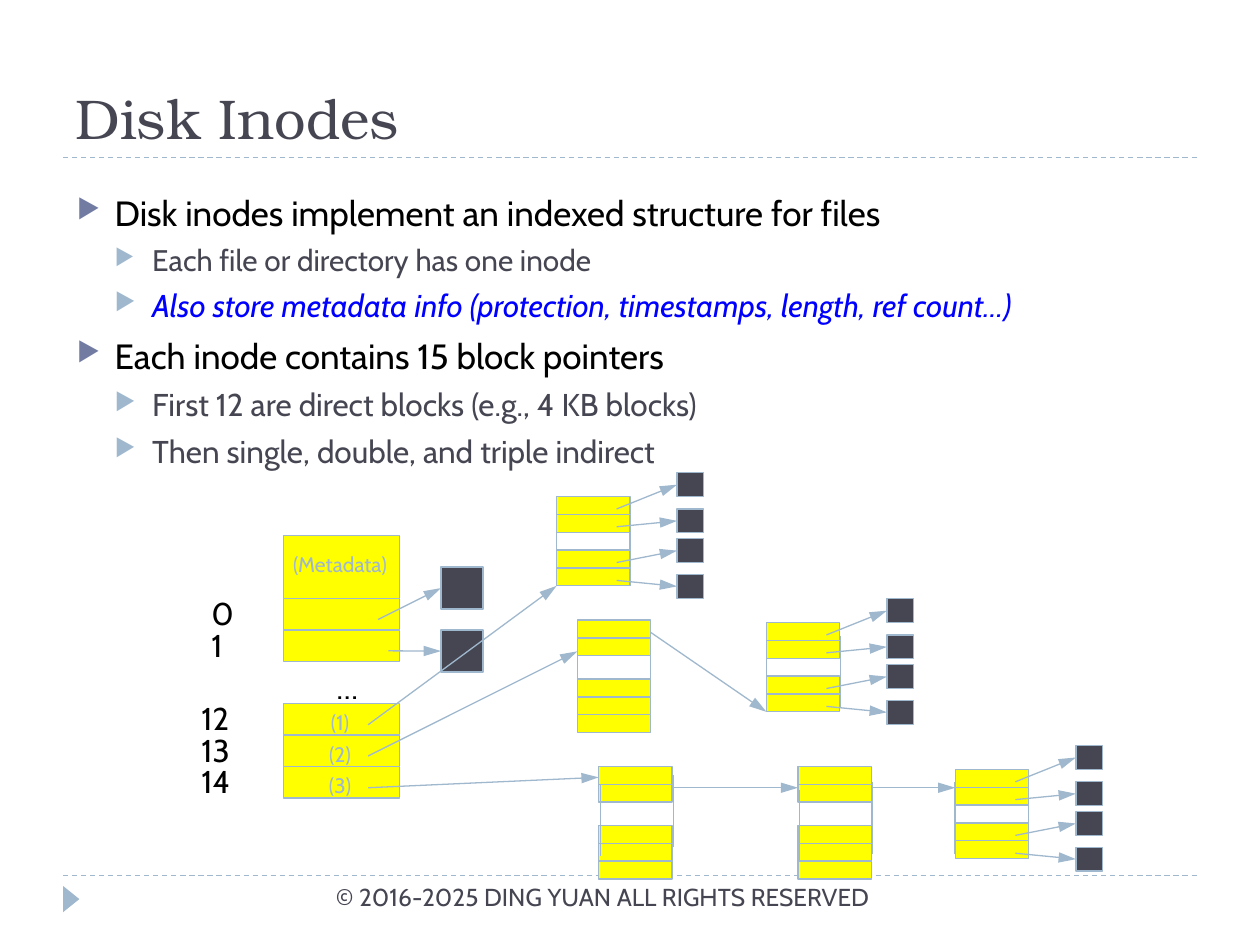
import dataclasses

import lxml.etree
import pptx
import pptx.dml.color
import pptx.enum.dml
import pptx.enum.shapes
import pptx.enum.text
import pptx.oxml.ns
import pptx.util

Cm = pptx.util.Cm
Pt = pptx.util.Pt
SHAPE = pptx.enum.shapes.MSO_SHAPE
ALIGN = pptx.enum.text.PP_ALIGN
ANCHOR = pptx.enum.text.MSO_ANCHOR


def color(code):
    return pptx.dml.color.RGBColor.from_string(code)


@dataclasses.dataclass(frozen=True)
class Theme:
    body_font: str = "Cabin"
    title_font: str = "TeX Gyre Bonum"
    ink: str = "464653"
    black: str = "000000"
    accent: str = "9FB8CD"
    bullet: str = "727CA3"
    highlight: str = "0000FF"
    cell: str = "FFFF00"
    title: int = 32
    lead: int = 20
    point: int = 18
    small_point: int = 17
    footer: int = 14
    caption: int = 12


THEME = Theme()

POINTS = [
    (0, "Disk inodes implement an indexed structure for files", THEME.lead, THEME.black),
    (1, "Each file or directory has one inode", THEME.small_point, THEME.ink),
    (1, "Also store metadata info (protection, timestamps, length, ref count…)",
     THEME.point, THEME.highlight),
    (0, "Each inode contains 15 block pointers", THEME.lead, THEME.black),
    (1, "First 12 are direct blocks (e.g., 4 KB blocks)", THEME.point, THEME.ink),
    (1, "Then single, double, and triple indirect", THEME.point, THEME.ink),
]

INODE_LEFT, INODE_WIDTH, INODE_ROW = 5.72, 2.33, 0.64
DIRECT_ROWS = {"0": 12.07, "1": 12.7}
INDIRECT_ROWS = {"12": 14.18, "13": 14.82, "14": 15.45}

ROW, TABLE_WIDTH = 0.36, 1.48
LEAF_ROWS = [0, ROW, 3 * ROW, 4 * ROW]
INDEX_ROWS = [0, ROW, 1.19, 1.19 + ROW, 1.19 + 2 * ROW]
LEAF_BLOCKS = [-0.48, 0.25, 0.85, 1.57]
SINGLE_LEAF, DOUBLE_LEAF, TRIPLE_LEAF = (11.22, 10.01), (15.45, 12.55), (19.26, 15.51)
DOUBLE_INDEX, TRIPLE_INDEX, TRIPLE_MIDDLE = (11.64, 12.5), (12.07, 15.45), (16.09, 15.45)

SIDE_HEIGHT = 1.45
SIDES = [
    (11.22, 10.36), (12.7, 10.36), (13.12, 12.91), (11.64, 13.02),
    (15.45, 12.88), (16.94, 12.83), (13.58, 15.62), (12.1, 15.81),
    (16.11, 15.92), (17.58, 15.77), (19.25, 15.76), (20.73, 15.76),
]


def assign(target, values):
    for name, value in values.items():
        setattr(target, name, value)


def add_text(page, place, text, size, align=ALIGN.LEFT, shade=THEME.black,
             font=THEME.body_font, anchor=ANCHOR.TOP):
    box = page.shapes.add_textbox(*map(Cm, place))
    assign(box.text_frame, {"word_wrap": True, "vertical_anchor": anchor})
    para = box.text_frame.paragraphs[0]
    para.alignment = align
    add_span(para, text, size, shade, font)


def add_span(para, text, size, shade, font=THEME.body_font, italic=False):
    span = para.add_run()
    span.text = text
    assign(span.font, {"name": font, "size": Pt(size), "italic": italic})
    span.font.color.rgb = color(shade)


def add_bullet(para, level):
    properties = para._p.get_or_add_pPr()
    properties.set("marL", str(Cm(0.76 * (level + 1))))
    properties.set("indent", str(-Cm(0.76)))
    qualify = pptx.oxml.ns.qn
    tint = lxml.etree.SubElement(properties, qualify("a:buClr"))
    shade = THEME.accent if level else THEME.bullet
    lxml.etree.SubElement(tint, qualify("a:srgbClr"), val=shade)
    lxml.etree.SubElement(properties, qualify("a:buSzPct"), val="76000")
    lxml.etree.SubElement(properties, qualify("a:buChar"), char="▶")


def add_points(page):
    box = page.shapes.add_textbox(Cm(1.3), Cm(3.73), Cm(22.63), Cm(5.92))
    frame = box.text_frame
    frame.word_wrap = True
    for number, (level, text, size, shade) in enumerate(POINTS):
        para = frame.add_paragraph() if number else frame.paragraphs[0]
        assign(para, {"level": level, "space_before": Pt(5 if level else 6)})
        add_bullet(para, level)
        add_span(para, text, size, shade, italic=shade == THEME.highlight)


def add_box(holder, left, top, width, height, shade):
    box = holder.shapes.add_shape(SHAPE.RECTANGLE, *map(Cm, (left, top, width, height)))
    box.shadow.inherit = False
    box.fill.solid()
    box.fill.fore_color.rgb = color(shade)
    box.line.color.rgb = color(THEME.accent)
    box.line.width = Pt(0.75)
    return box


def add_line(holder, start, end, arrow=False, dash=None, target=None):
    line = holder.shapes.add_connector(
        pptx.enum.shapes.MSO_CONNECTOR.STRAIGHT, *map(Cm, (*start, *end)))
    line.line.color.rgb = color(THEME.accent)
    assign(line.line, {"width": Pt(0.75), "dash_style": dash})
    if arrow:
        lxml.etree.SubElement(line.line._get_or_add_ln(), pptx.oxml.ns.qn("a:tailEnd"),
                              type="triangle", w="med", len="lg")
    lxml.etree.SubElement(line._element.spPr, pptx.oxml.ns.qn("a:effectLst"))
    if target is not None:
        line.end_connect(target, 1)


def add_block_arrow(holder, start, left, top, width, height):
    block = add_box(holder, left, top, width, height, THEME.ink)
    add_line(holder, start, (left, top + height / 2), arrow=True, target=block)


def add_table_rows(page, origin, rows):
    group = page.shapes.add_group_shape()
    left, top = origin
    for row in rows:
        add_box(group, left, top + row, TABLE_WIDTH, ROW, THEME.cell)
    return group


def add_leaf(page, origin):
    group = add_table_rows(page, origin, LEAF_ROWS)
    left, top = origin
    for row, block in zip(LEAF_ROWS, LEAF_BLOCKS):
        add_block_arrow(group, (left + 1.21, top + row + 0.25),
                        left + 2.43, top + block, 0.53, 0.48)


def add_frame(page):
    for height in (17.65, 3.18):
        add_line(page, (1.27, height), (24.13, height),
                 dash=pptx.enum.dml.MSO_LINE.DASH)
    marker = page.shapes.add_shape(SHAPE.ISOSCELES_TRIANGLE,
                                   *map(Cm, (1.17, 17.96, 0.53, 0.33)))
    marker.rotation = 90
    marker.shadow.inherit = False
    marker.fill.solid()
    marker.fill.fore_color.rgb = color(THEME.accent)
    marker.line.fill.background()
    add_text(page, (6.5, 17.65, 11.28, 1.02), "© 2016-2025 DING YUAN ALL RIGHTS RESERVED",
             THEME.footer, ALIGN.RIGHT, THEME.ink)
    add_text(page, (1.27, 0.43, 22.86, 2.74), "Disk Inodes", THEME.title,
             shade=THEME.ink, font=THEME.title_font, anchor=ANCHOR.BOTTOM)


def add_inode(page):
    for label, top in {**DIRECT_ROWS, **INDIRECT_ROWS}.items():
        add_box(page, INODE_LEFT, top, INODE_WIDTH, INODE_ROW, THEME.cell)
        left = 4.01 if label in DIRECT_ROWS else 3.81
        add_text(page, (left, top - 0.21, 1.27, 0.94), label, THEME.point)
    add_text(page, (6.15, 13.34, 1.7, 0.94), "…", THEME.point, ALIGN.CENTER)
    add_block_arrow(page, (7.62, 12.49), 8.89, 11.43, 0.85, 0.85)
    add_block_arrow(page, (7.83, 13.12), 8.89, 12.7, 0.85, 0.85)
    add_box(page, INODE_LEFT, 10.8, INODE_WIDTH, 1.27, THEME.cell)


def add_captions(page):
    tops = [11, *INDIRECT_ROWS.values()]
    for text, top in zip(("(Metadata)", "(1)", "(2)", "(3)"), tops):
        add_text(page, (5.37, top, 2.97, 0.76), text, THEME.caption,
                 ALIGN.CENTER, THEME.accent)


def add_indirection(page):
    for origin in (SINGLE_LEAF, DOUBLE_LEAF, TRIPLE_LEAF):
        add_leaf(page, origin)
    for origin in (DOUBLE_INDEX, TRIPLE_INDEX, TRIPLE_MIDDLE):
        add_table_rows(page, origin, INDEX_ROWS)
    for start, end in (
        ((7.42, 14.61), (11.22, 11.81)),
        ((7.42, 15.24), (11.64, 13.13)),
        ((7.42, 15.88), (12.07, 15.67)),
        ((13.12, 12.75), (15.45, 14.35)),
        ((13.55, 15.88), (16.09, 15.88)),
        ((17.57, 15.88), (19.26, 15.88)),
    ):
        add_line(page, start, end, arrow=True)
    for left, top in SIDES:
        add_line(page, (left, top + SIDE_HEIGHT), (left, top))


def main():
    deck = pptx.Presentation()
    assign(deck, {"slide_width": Cm(25.4), "slide_height": Cm(19.05)})
    page = deck.slides.add_slide(deck.slide_layouts[6])
    add_frame(page)
    add_points(page)
    add_inode(page)
    add_indirection(page)
    add_captions(page)
    deck.save("out.pptx")


if __name__ == "__main__":
    main()
